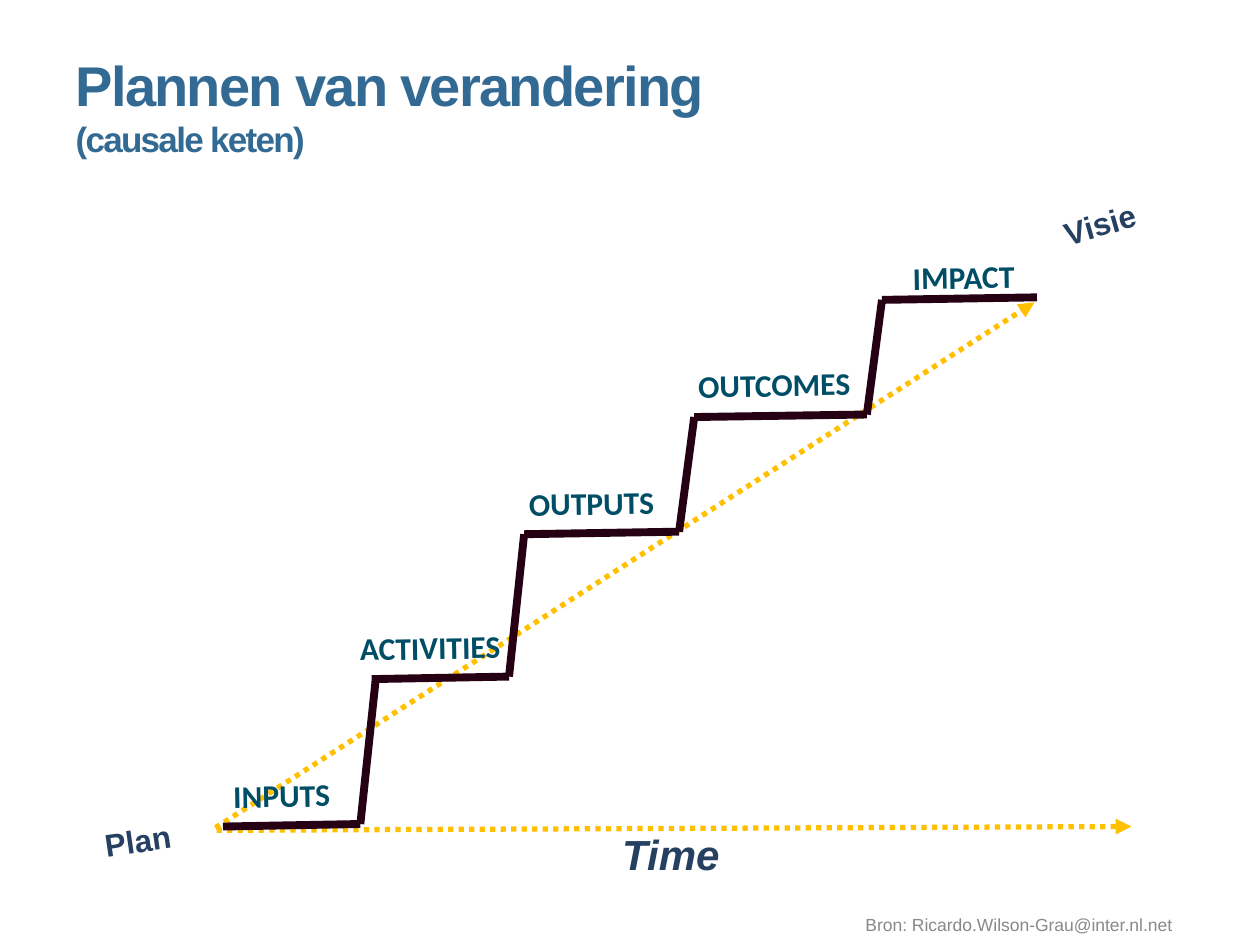
from dataclasses import dataclass
from itertools import pairwise

from pptx import Presentation
from pptx.dml.color import RGBColor as Rgb
from pptx.enum.dml import MSO_LINE as Dash
from pptx.enum.shapes import MSO_CONNECTOR as Link
from pptx.enum.text import MSO_ANCHOR as Anchor, MSO_AUTO_SIZE as Fit, PP_ALIGN as Align
from pptx.oxml.ns import qn
from pptx.util import Pt
from lxml.etree import SubElement

SCALE = 9144
HUES = {
    "title": "326A94",
    "navy": "254061",
    "teal": "004D66",
    "stair": "260013",
    "gold": "FFC000",
    "grey": "898989",
}


@dataclass
class Label:
    text: str
    left: int
    top: int
    width: int
    height: int
    size: int = 18
    hue: str = "teal"
    font: str = "Calibri"
    align: Align = Align.CENTER
    turn: float = 0
    bold: bool = True
    slant: bool = False
    wrap: bool = True
    anchor: Anchor = Anchor.TOP


@dataclass
class Arrow:
    start: tuple[int, int]
    end: tuple[int, int]


STAIRS = [
    [(177, 656), (286, 654), (298, 541)],
    [(295, 539), (404, 537), (416, 424), (539, 422), (551, 331),
     (688, 329), (700, 238), (823, 236)],
]
ARROWS = [
    Arrow((171, 657), (821, 240)),
    Arrow((172, 659), (898, 656)),
]
STEPS = [
    Label("INPUTS", 141, 611, 165, 40, turn=-1),
    Label("ACTIVITIES", 236, 494, 171, 40, turn=-1, align=Align.RIGHT),
    Label("OUTPUTS", 397, 379, 145, 40, turn=-1),
    Label("OUTCOMES", 542, 285, 145, 40, turn=-1),
    Label("IMPACT", 670, 200, 145, 40, turn=-1, align=Align.RIGHT),
]
NOTES = [
    Label("Visie", 822, 157, 112, 77, 18, "navy", "Arial", turn=-16.1, wrap=False),
    Label("Plan", 56, 647, 112, 77, 18, "navy", "Arial", turn=-8.4, wrap=False),
    Label("Time", 484, 653, 114, 51, 24, "navy", "Arial", Align.LEFT, slant=True),
    Label("Bron: Ricardo.Wilson-Grau@inter.nl.net", 650, 714, 317, 40, 10,
          "grey", "Arial", bold=False, anchor=Anchor.MIDDLE),
]


def px(num: int) -> int:
    return num * SCALE


def add_run(para, text: str, size: int, hue: str, name: str, bold: bool, slant: bool = False):
    run = para.add_run()
    run.text = text
    font = run.font
    font.size, font.name, font.bold, font.italic = Pt(size), name, bold, slant
    font.color.rgb = Rgb.from_string(HUES[hue])
    return run


def add_label(slide, item: Label) -> None:
    box = slide.shapes.add_textbox(*map(px, (item.left, item.top, item.width, item.height)))
    box.rotation = item.turn
    frame = box.text_frame
    frame.word_wrap = item.wrap
    frame.auto_size = Fit.NONE
    frame.vertical_anchor = item.anchor
    para = frame.paragraphs[0]
    para.alignment = item.align
    add_run(para, item.text, item.size, item.hue, item.font, item.bold, item.slant)


def add_line(slide, start: tuple[int, int], end: tuple[int, int], hue: str, width: float):
    link = slide.shapes.add_connector(Link.STRAIGHT, *map(px, start + end))
    link.line.color.rgb = Rgb.from_string(HUES[hue])
    link.line.width = Pt(width)
    SubElement(link._element.spPr, qn("a:effectLst"))
    return link


def add_arrow(slide, item: Arrow) -> None:
    line = add_line(slide, item.start, item.end, "gold", 3).line
    line.dash_style = Dash.ROUND_DOT
    SubElement(line._get_or_add_ln(), qn("a:tailEnd"), type="triangle")


def add_title(slide) -> None:
    title = slide.shapes.title
    title.left, title.top, title.width, title.height = map(px, (50, 35, 833, 120))
    frame = title.text_frame
    frame.word_wrap = True
    frame.auto_size = Fit.NONE
    frame.vertical_anchor = Anchor.TOP
    rows = [("Plannen van verandering", 32), ("(causale keten)", 20)]
    for idx, (text, size) in enumerate(rows):
        para = frame.add_paragraph() if idx else frame.paragraphs[0]
        para.alignment = Align.LEFT
        run = add_run(para, text, size, "title", "Arial", True)
        run.font._element.set("spc", "-100")


def main() -> None:
    deck = Presentation()
    deck.slide_width, deck.slide_height = px(1000), px(750)
    slide = deck.slides.add_slide(deck.slide_layouts[5])
    add_title(slide)
    for item in ARROWS:
        add_arrow(slide, item)
    for flight in STAIRS:
        for start, end in pairwise(flight):
            add_line(slide, start, end, "stair", 4.5)
    for item in STEPS + NOTES:
        add_label(slide, item)
    deck.save("out.pptx")


if __name__ == "__main__":
    main()
